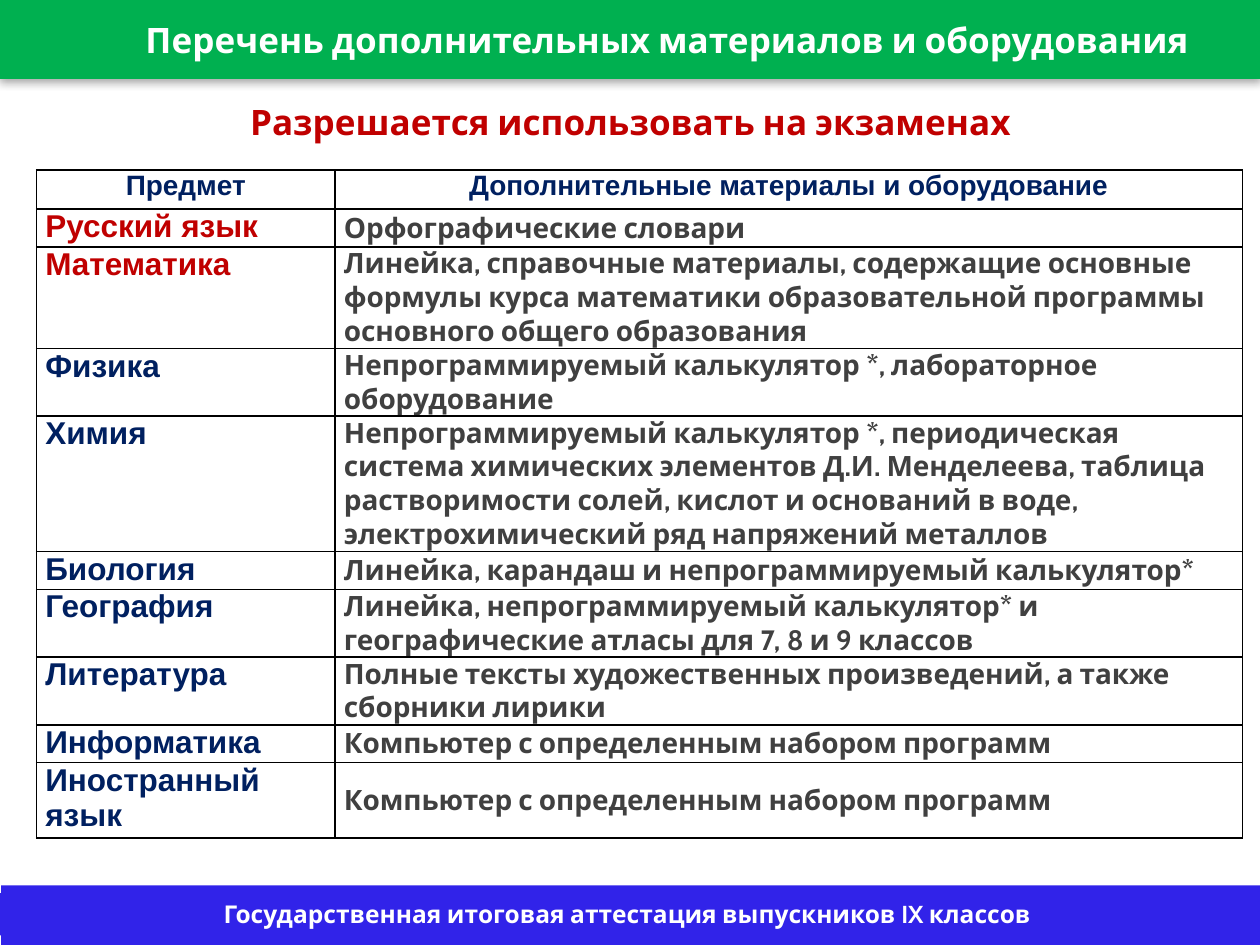
"""Build the slide listing the materials allowed at the ninth-grade exams."""
from dataclasses import dataclass

from lxml.etree import SubElement
from pptx import Presentation
from pptx.dml.color import RGBColor
from pptx.enum.shapes import MSO_SHAPE
from pptx.enum.text import MSO_ANCHOR, MSO_AUTO_SIZE, PP_ALIGN
from pptx.oxml.ns import qn
from pptx.util import Inches, Pt

WIDTH, HEIGHT = Inches(10), Inches(7.5)
COLUMN_SHARES = (0.237, 0.72)
WHITE = RGBColor(0xFF, 0xFF, 0xFF)
BLACK = RGBColor(0x00, 0x00, 0x00)
GREEN = RGBColor(0x00, 0xB0, 0x50)
BLUE = RGBColor(0x31, 0x23, 0xE9)
NAVY = RGBColor(0x00, 0x20, 0x60)
RED = RGBColor(0xC0, 0x00, 0x00)
GRAY = RGBColor(0x40, 0x40, 0x40)


@dataclass(frozen=True)
class Area:
    left: float
    top: float
    width: float
    height: float

    def lengths(self) -> tuple:
        return (int(self.left * WIDTH), int(self.top * HEIGHT),
                int(self.width * WIDTH), int(self.height * HEIGHT))


@dataclass(frozen=True)
class Style:
    font: str
    size: int
    color: RGBColor
    align: PP_ALIGN = PP_ALIGN.LEFT
    before: int = 0
    after: int = 0
    margin: float = 0
    indent: float = 0


@dataclass(frozen=True)
class Subject:
    name: str
    materials: str
    height: float
    color: RGBColor = NAVY
    hanging: float = 0


BANNER = Area(0, 0, 1, 0.083)
HEADING = Area(0.055, 0.1, 0.891, 0.059)
TABLE = Area(0.029, 0.18, 0.957, 0.7)
FOOTER = Area(0.001, 0.937, 1, 0.063)
FOOTER_TEXT = Area(0, 0.945, 1, 0.045)

COMPUTER = "Компьютер с определенным набором программ"
SUBJECTS = (
    Subject("Русский язык", "Орфографические словари", 0.3, RED, 0.38),
    Subject("Математика", "Линейка, справочные материалы, содержащие основные формулы курса "
            "математики образовательной программы основного общего образования", 0.8, RED),
    Subject("Физика", "Непрограммируемый калькулятор *, лабораторное оборудование", 0.53),
    Subject("Химия", "Непрограммируемый калькулятор *, периодическая система химических "
            "элементов Д.И. Менделеева, таблица растворимости солей, кислот и оснований "
            "в воде, электрохимический ряд напряжений металлов", 1.06),
    Subject("Биология", "Линейка, карандаш и непрограммируемый калькулятор*", 0.3, hanging=0.38),
    Subject("География", "Линейка, непрограммируемый калькулятор* и географические атласы "
            "для 7, 8 и 9 классов", 0.53),
    Subject("Литература", "Полные тексты художественных произведений, а также сборники лирики",
            0.53),
    Subject("Информатика", COMPUTER, 0.3),
    Subject("Иностранный язык", COMPUTER, 0.6),
)


def write(frame, text: str, style: Style) -> None:
    """Write one bold styled paragraph into a text frame."""
    frame.word_wrap = True
    paragraph = frame.paragraphs[0]
    paragraph.alignment = style.align
    paragraph.space_before, paragraph.space_after = Pt(style.before), Pt(style.after)
    properties = paragraph._p.get_or_add_pPr()
    properties.set("marL", str(Inches(style.margin)))
    properties.set("indent", str(Inches(style.indent)))
    run = paragraph.add_run()
    run.text = text
    run.font.name, run.font.size, run.font.bold = style.font, Pt(style.size), True
    run.font.color.rgb = style.color


def add_banner(slide, text: str) -> None:
    """Turn the title placeholder into a green banner with a soft shadow."""
    title = slide.shapes.title
    title.left, title.top, title.width, title.height = BANNER.lengths()
    title.fill.solid()
    title.fill.fore_color.rgb = GREEN
    title.line.color.rgb = GREEN
    title.line.width = Pt(0.75)
    effects = SubElement(title._element.spPr, qn("a:effectLst"))
    shadow = SubElement(effects, qn("a:outerShdw"), blurRad=str(Pt(5)),
                        dist=str(Pt(1.8)), dir="5400000", rotWithShape="0")
    color = SubElement(shadow, qn("a:srgbClr"), val=str(BLACK))
    SubElement(color, qn("a:alpha"), val="35000")
    frame = title.text_frame
    frame.auto_size = MSO_AUTO_SIZE.NONE
    frame.vertical_anchor = MSO_ANCHOR.MIDDLE
    write(frame, text, Style("Cabin", 20, WHITE, PP_ALIGN.CENTER, margin=0.59))


def add_bar(group, area: Area):
    """Add a plain blue bar to the footer group."""
    bar = group.shapes.add_shape(MSO_SHAPE.RECTANGLE, *area.lengths())
    bar.shadow.inherit = False
    bar.fill.solid()
    bar.fill.fore_color.rgb = BLUE
    bar.line.fill.background()
    return bar


def add_footer(slide, text: str) -> None:
    """Add the footer as a group of a bar and its caption."""
    group = slide.shapes.add_group_shape()
    add_bar(group, FOOTER)
    frame = add_bar(group, FOOTER_TEXT).text_frame
    frame.vertical_anchor = MSO_ANCHOR.TOP
    write(frame, text, Style("Cabin", 14, WHITE, PP_ALIGN.CENTER))


def fill_cell(cell, text: str, style: Style, anchor: MSO_ANCHOR = MSO_ANCHOR.TOP) -> None:
    """Border a transparent cell and write its text."""
    properties = cell._tc.get_or_add_tcPr()
    for side in ("lnL", "lnR", "lnT", "lnB"):
        line = SubElement(properties, qn(f"a:{side}"), w=str(Pt(1)))
        SubElement(SubElement(line, qn("a:solidFill")), qn("a:srgbClr"), val=str(BLACK))
    cell.fill.background()
    cell.margin_left = cell.margin_right = Inches(0.07)
    cell.margin_top = cell.margin_bottom = 0
    cell.vertical_anchor = anchor
    write(cell.text_frame, text, style)


def add_materials_table(slide) -> None:
    """Add the table of subjects and permitted materials."""
    table = slide.shapes.add_table(len(SUBJECTS) + 1, 2, *TABLE.lengths()).table
    table.first_row = table.horz_banding = False
    for column, share in zip(table.columns, COLUMN_SHARES):
        column.width = int(share * WIDTH)
    table.rows[0].height = Inches(0.31)
    header = Style("Arial", 16, NAVY, PP_ALIGN.CENTER, before=6)
    for index, text in enumerate(("Предмет", "Дополнительные материалы и оборудование")):
        fill_cell(table.cell(0, index), text, header)
    for row, subject in enumerate(SUBJECTS, start=1):
        table.rows[row].height = Inches(subject.height)
        fill_cell(table.cell(row, 0), subject.name,
                  Style("Arial", 18, subject.color, before=6, after=6))
        fill_cell(table.cell(row, 1), subject.materials,
                  Style("Cabin", 16, GRAY, after=6, margin=subject.hanging,
                        indent=-subject.hanging), MSO_ANCHOR.MIDDLE)


def main() -> None:
    """Create the presentation and save it."""
    presentation = Presentation()
    presentation.slide_width, presentation.slide_height = WIDTH, HEIGHT
    slide = presentation.slides.add_slide(presentation.slide_layouts[5])
    add_footer(slide, "Государственная итоговая аттестация выпускников IX классов ")
    add_banner(slide, "Перечень дополнительных материалов и оборудования")
    add_materials_table(slide)
    heading = slide.shapes.add_textbox(*HEADING.lengths())
    write(heading.text_frame, "Разрешается использовать на экзаменах",
          Style("Cabin", 20, RED, PP_ALIGN.CENTER))
    presentation.save("out.pptx")


if __name__ == "__main__":
    main()
